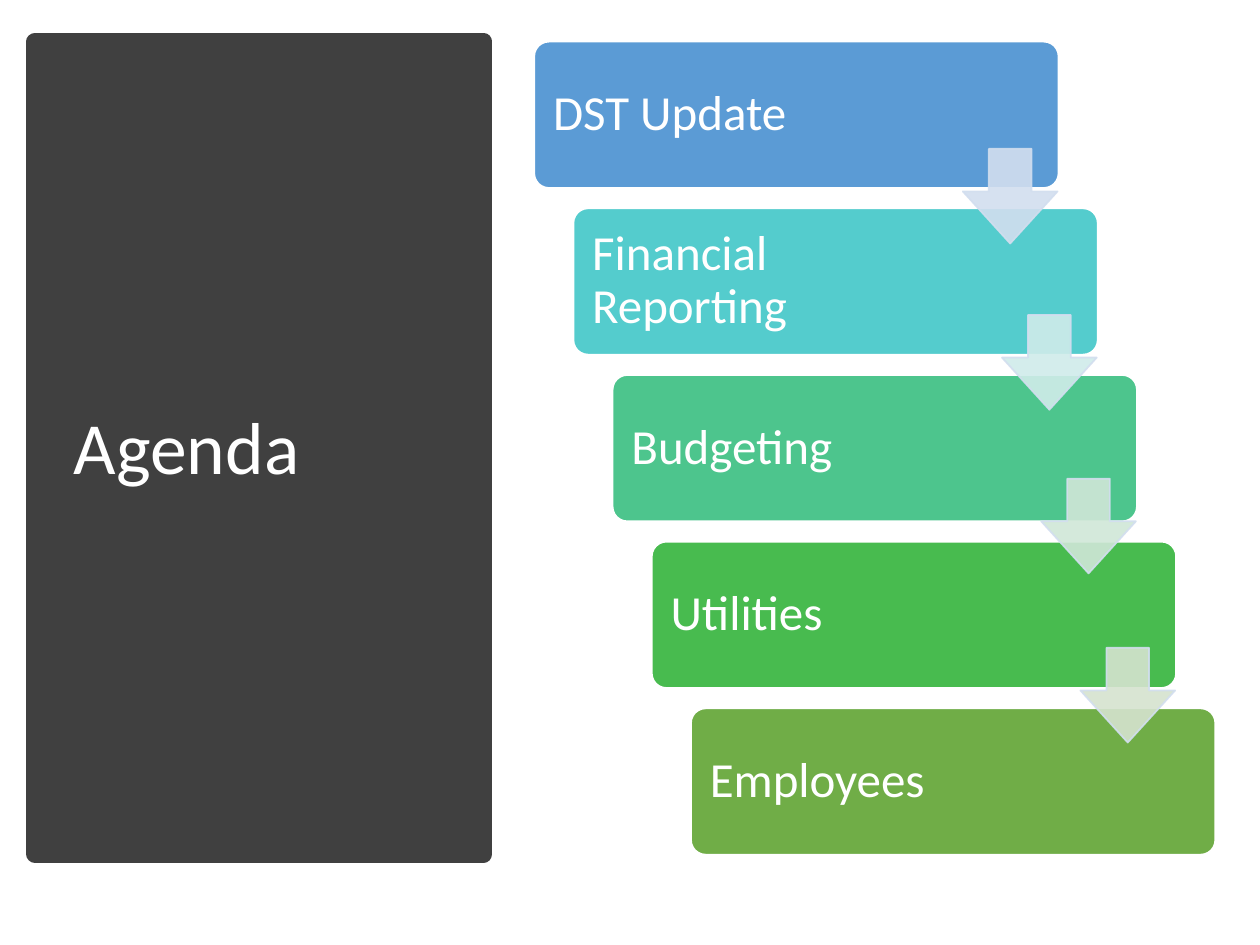
import pptx
import pptx.dml.color
import pptx.enum.shapes
import pptx.enum.text
import pptx.oxml.ns
import pptx.util
from lxml import etree

Cm, Pt = pptx.util.Cm, pptx.util.Pt
RGB = pptx.dml.color.RGBColor.from_string
PRESET = pptx.enum.shapes.MSO_SHAPE
COLORS = {"panel": "404040", "white": "FFFFFF", "arrow_edge": "D2DEEF"}


def add_text(parent, text, left, top, width, height, size, inset_x=0.25, inset_y=0.13):
    box = parent.add_textbox(Cm(left), Cm(top), Cm(width), Cm(height))
    frame = box.text_frame
    frame.word_wrap = True
    frame.vertical_anchor = pptx.enum.text.MSO_ANCHOR.MIDDLE
    frame.margin_left = frame.margin_right = Cm(inset_x)
    frame.margin_top = frame.margin_bottom = Cm(inset_y)
    paragraph = frame.paragraphs[0]
    paragraph.line_spacing = 0.9
    run = paragraph.add_run()
    run.text = text
    run.font.name = "Calibri"
    run.font.size = Pt(size)
    run.font.color.rgb = RGB(COLORS["white"])


def add_block(parent, preset, left, top, width, height, fill, edge,
              edge_width=1, adjust=(), opacity=None):
    """Add a filled, outlined preset shape; opacity is a percentage."""
    block = parent.add_shape(preset, Cm(left), Cm(top), Cm(width), Cm(height))
    block.shadow.inherit = False
    for index, value in enumerate(adjust):
        block.adjustments[index] = value
    block.fill.solid()
    block.fill.fore_color.rgb = RGB(fill)
    block.line.color.rgb = RGB(edge)
    block.line.width = Pt(edge_width)
    if opacity is not None:
        for color in block._element.spPr.iter(pptx.oxml.ns.qn("a:srgbClr")):
            etree.SubElement(color, pptx.oxml.ns.qn("a:alpha"), val=str(opacity * 1000))


deck = pptx.Presentation()
deck.slide_width, deck.slide_height = Cm(25.4), Cm(19.05)
slide = deck.slides.add_slide(deck.slide_layouts[6])

# Title panel
add_block(slide.shapes, PRESET.RECTANGLE, 0.71, 0.84, 9.04, 16.38,
          COLORS["panel"], COLORS["panel"], edge_width=10)
add_text(slide.shapes, "Agenda", 1.24, 1.78, 7.92, 14.6, size=42)

# Staircase of agenda items: label, colour, text width
agenda = [
    ("DST Update", "5B9BD5", 7.04),
    ("Financial Reporting", "54CCCD", 7.7),
    ("Budgeting", "4DC58D", 7.7),
    ("Utilities", "48BB4F", 7.7),
    ("Employees", "70AD47", 7.7),
]
STEP_X, STEP_Y = 0.79, 3.36
staircase = slide.shapes.add_group_shape().shapes
for step, (label, color, text_width) in enumerate(agenda):
    left, top = 10.77 + step * STEP_X, 0.84 + step * STEP_Y
    add_block(staircase, PRESET.ROUNDED_RECTANGLE, left, top, 10.57, 2.95,
              color, COLORS["white"], adjust=[0.1])
    add_text(staircase, label, left + 0.08, top + 0.09, text_width, 2.77,
             size=28, inset_x=0.3, inset_y=0.3)

# Arrows from each item to the next: top, colour
arrows = [(3.0, "D2DEEF"), (6.35, "D0ECEA"), (9.65, "D0E7D8"), (13.06, "D5E3CF")]
for step, (top, color) in enumerate(arrows):
    add_block(staircase, PRESET.DOWN_ARROW, 19.41 + step * STEP_X, top, 1.91, 1.91,
              color, COLORS["arrow_edge"], adjust=[0.45, 0.55], opacity=90)
    # python-pptx lists the head length first, then the shaft width

deck.save("out.pptx")
